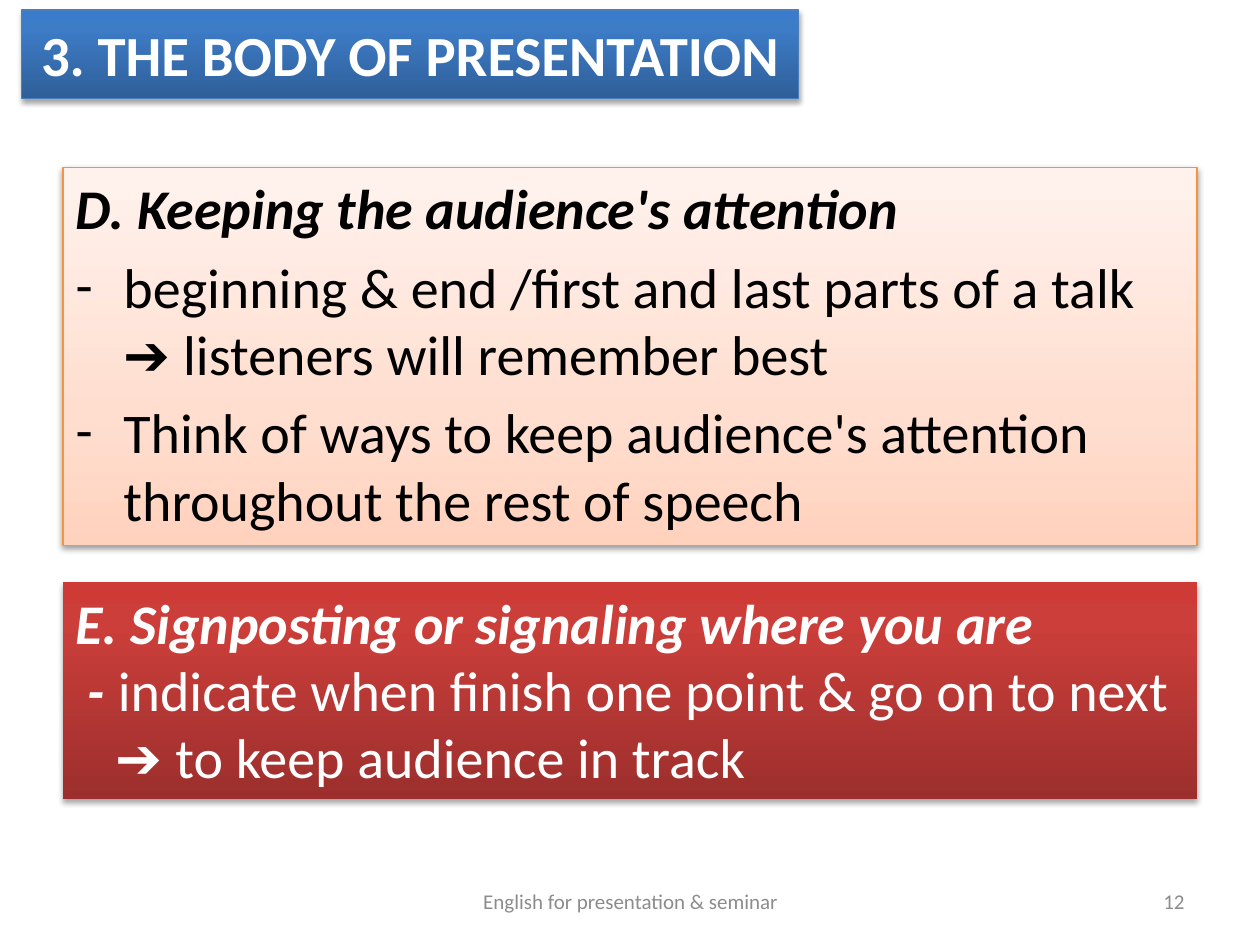
from copy import deepcopy
from dataclasses import dataclass, field

from lxml.etree import SubElement
from pptx import Presentation
from pptx.dml.color import RGBColor
from pptx.enum.shapes import MSO_SHAPE
from pptx.enum.text import MSO_ANCHOR, MSO_AUTO_SIZE, PP_ALIGN
from pptx.oxml.ns import qn
from pptx.shapes.base import BaseShape
from pptx.util import Inches, Pt


@dataclass(frozen=True)
class Theme:
    font: str = "Calibri"
    title_size: float = 32.4
    body_size: float = 32
    footer_size: float = 12
    light: str = "FFFFFF"
    dark: str = "000000"
    muted: str = "8C8C8C"
    blue: tuple = ((0, "2F5F99"), (80, "3D7CC7"), (100, "3A7CCB"))
    blue_line: str = "4B7EBC"
    peach: tuple = ((0, "FFD2BD"), (35, "FFDED0"), (100, "FFF2ED"))
    peach_line: str = "F69240"
    red: tuple = ((0, "9C2F2D"), (80, "CB3E3A"), (100, "CE3B37"))


@dataclass(frozen=True)
class Phrase:
    text: str
    strong: bool = False


@dataclass(frozen=True)
class Line:
    phrases: tuple[Phrase, ...]
    left: float = 0
    hanging: float = 0
    bullet: str = ""
    space_before: float = 0


@dataclass(frozen=True)
class Panel:
    box: tuple[float, float, float, float]
    gradient: tuple
    outline: str = ""
    shadow: dict = field(default_factory=lambda: {"opacity": 35, "distance": 1.8})


@dataclass(frozen=True)
class Footer:
    text: str
    left: float
    width: float
    align: PP_ALIGN


THEME = Theme()
TITLE = "3. THE BODY OF PRESENTATION"
TITLE_PANEL = Panel((0.17, 0.08, 6.17, 0.7), THEME.blue, THEME.blue_line)
ATTENTION_PANEL = Panel((0.5, 1.33, 9, 3), THEME.peach, THEME.peach_line,
                        {"opacity": 38, "distance": 1.6})
SIGNPOST_PANEL = Panel((0.5, 4.62, 9, 1.72), THEME.red)

HANGING = {"left": 0.38, "hanging": 0.38, "space_before": 6.4}
ATTENTION = (
    Line((Phrase("D. Keeping the audience's attention", True),), **HANGING),
    Line((Phrase("beginning & end /first and last parts of a talk ➔ listeners will remember best"),),
         bullet="-", **HANGING),
    Line((Phrase("Think of ways to keep audience's attention throughout the rest of speech"),),
         bullet="-", **HANGING),
)
SIGNPOST = (
    Line((Phrase("E. Signposting or signaling where you are", True),)),
    Line((Phrase("- ", True), Phrase("indicate when finish one point & go on to next")), left=0.1),
    Line((Phrase("➔ to keep audience in track"),), left=0.32),
)
FOOTERS = (
    Footer("12", 7.17, 2.33, PP_ALIGN.RIGHT),
    Footer("English for presentation & seminar", 3.42, 3.17, PP_ALIGN.CENTER),
)


def apply_format(target: object, values: dict) -> None:
    for name, value in values.items():
        setattr(target, name, value)


def place(shape: BaseShape, box: tuple[float, float, float, float]) -> None:
    apply_format(shape, dict(zip(("left", "top", "width", "height"), map(Inches, box))))


def style_panel(shape: BaseShape, panel: Panel) -> None:
    place(shape, panel.box)
    shape.fill.gradient()
    shape.fill.gradient_angle = 90
    stops = shape._element.spPr.find(".//" + qn("a:gsLst"))
    stops.append(deepcopy(stops[0]))
    for stop, (percent, color) in zip(shape.fill.gradient_stops, panel.gradient):
        stop.position = percent / 100
        stop.color.rgb = RGBColor.from_string(color)
    if panel.outline:
        shape.line.color.rgb = RGBColor.from_string(panel.outline)
        shape.line.width = Pt(0.75)
    else:
        shape.line.fill.background()
    shape.shadow.inherit = False
    effects = shape._element.spPr.find(qn("a:effectLst"))
    shadow = SubElement(effects, qn("a:outerShdw"), blurRad=str(Pt(3.1)),
                        dist=str(Pt(panel.shadow["distance"])), dir="5400000", rotWithShape="0")
    tone = SubElement(shadow, qn("a:srgbClr"), val=THEME.dark)
    SubElement(tone, qn("a:alpha"), val=str(panel.shadow["opacity"] * 1000))


def add_phrase(paragraph: object, text: str, size: float, color: str,
               bold: bool = False, italic: bool = False) -> None:
    run = paragraph.add_run()
    run.text = text
    apply_format(run.font, {"name": THEME.font, "size": Pt(size), "bold": bold, "italic": italic})
    run.font.color.rgb = RGBColor.from_string(color)


def write_lines(shape: BaseShape, lines: tuple[Line, ...], color: str) -> None:
    frame = shape.text_frame
    apply_format(frame, {"word_wrap": True, "auto_size": MSO_AUTO_SIZE.NONE,
                         "vertical_anchor": MSO_ANCHOR.TOP})
    for index, line in enumerate(lines):
        paragraph = frame.add_paragraph() if index else frame.paragraphs[0]
        apply_format(paragraph, {"alignment": PP_ALIGN.LEFT, "space_before": Pt(line.space_before)})
        properties = paragraph._p.get_or_add_pPr()
        properties.set("marL", str(Inches(line.left)))
        properties.set("indent", str(-Inches(line.hanging)))
        if line.bullet:
            SubElement(properties, qn("a:buFont"), typeface=THEME.font)
            SubElement(properties, qn("a:buChar"), char=line.bullet)
        else:
            SubElement(properties, qn("a:buNone"))
        for phrase in line.phrases:
            add_phrase(paragraph, phrase.text, THEME.body_size, color, phrase.strong, phrase.strong)


def write_label(shape: BaseShape, text: str, size: float, color: str,
                align: PP_ALIGN, bold: bool = False) -> None:
    frame = shape.text_frame
    apply_format(frame, {"word_wrap": True, "auto_size": MSO_AUTO_SIZE.NONE,
                         "vertical_anchor": MSO_ANCHOR.MIDDLE})
    frame.paragraphs[0].alignment = align
    add_phrase(frame.paragraphs[0], text, size, color, bold)


def main() -> None:
    deck = Presentation()
    apply_format(deck, {"slide_width": Inches(10), "slide_height": Inches(7.5)})
    slide = deck.slides.add_slide(deck.slide_layouts[1])

    attention = slide.placeholders[1]
    style_panel(attention, ATTENTION_PANEL)
    write_lines(attention, ATTENTION, THEME.dark)

    title = slide.shapes.title
    style_panel(title, TITLE_PANEL)
    write_label(title, TITLE, THEME.title_size, THEME.light, PP_ALIGN.CENTER, True)

    signpost = slide.shapes.add_shape(MSO_SHAPE.RECTANGLE, *map(Inches, SIGNPOST_PANEL.box))
    style_panel(signpost, SIGNPOST_PANEL)
    write_lines(signpost, SIGNPOST, THEME.light)

    for footer in FOOTERS:
        label = slide.shapes.add_textbox(*map(Inches, (footer.left, 6.95, footer.width, 0.4)))
        write_label(label, footer.text, THEME.footer_size, THEME.muted, footer.align)

    deck.save("out.pptx")


if __name__ == "__main__":
    main()
